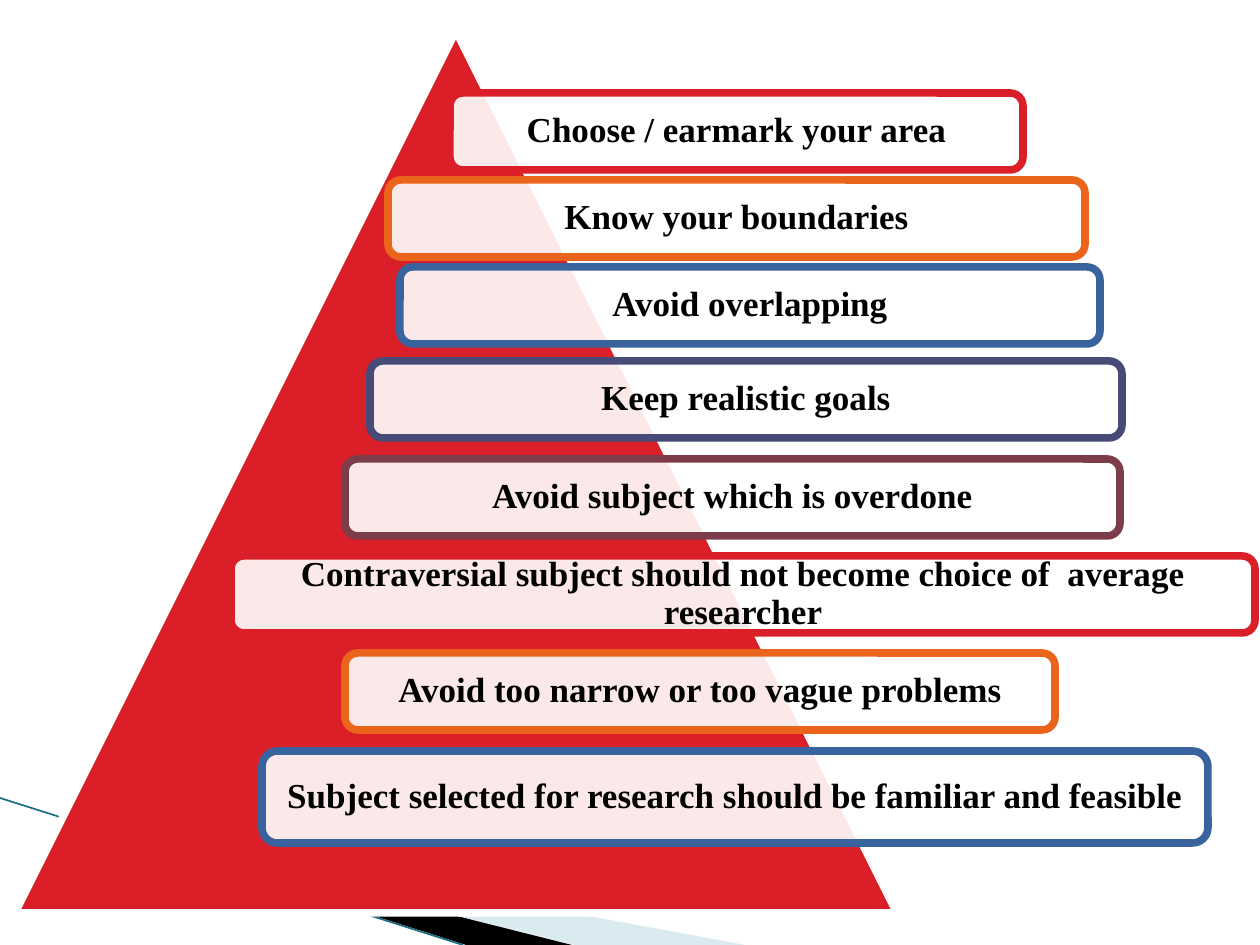
from lxml import etree
from pptx import Presentation
from pptx.dml.color import RGBColor
from pptx.enum.shapes import MSO_CONNECTOR, MSO_SHAPE
from pptx.enum.text import MSO_ANCHOR, PP_ALIGN
from pptx.oxml.ns import qn
from pptx.util import Pt

SCALE = 914400 / 126
TRI = MSO_SHAPE.ISOSCELES_TRIANGLE
ROUND = MSO_SHAPE.ROUNDED_RECTANGLE
LINE = MSO_CONNECTOR.STRAIGHT
MID = MSO_ANCHOR.MIDDLE
CENTER = PP_ALIGN.CENTER
RED, ORANGE, BLUE = "DA1F28", "EB641B", "39639D"

STEPS = [
    ("Choose / earmark your area", 450, 93, 573, 77, RED),
    ("Know your boundaries", 388, 180, 697, 77, ORANGE),
    ("Avoid overlapping", 400, 267, 700, 77, BLUE),
    ("Keep realistic goals", 370, 361, 752, 77, "474B78"),
    ("Avoid subject which is overdone", 345, 459, 775, 77, "7D3C4A"),
    ("Contraversial subject should not become choice of  average researcher",
     231, 556, 1024, 77, RED),
    ("Avoid too narrow or too vague problems", 345, 653, 710, 77, ORANGE),
    ("Subject selected for research should be familiar and feasible",
     262, 751, 946, 92, BLUE),
]


def px(num):
    return round(num * SCALE)


def color(code):
    return RGBColor.from_string(code)


def assign(target, values):
    for name, value in values.items():
        setattr(target, name, value)


class Deck:
    font = {"name": "Times New Roman", "size": Pt(20), "bold": True}
    para = {"alignment": CENTER, "line_spacing": 0.9}
    frame = {"word_wrap": True, "vertical_anchor": MID,
             "margin_left": px(6), "margin_right": px(6),
             "margin_top": px(6), "margin_bottom": px(6)}
    edge = Pt(4.33)

    def __init__(self, wide, high):
        self.file = Presentation()
        assign(self.file, {"slide_width": px(wide), "slide_height": px(high)})
        self.slide = self.file.slides.add_slide(self.file.slide_layouts[6])

    def paint(self, shape, fill, alpha=100, edge=None):
        shape.shadow.inherit = False
        shape.fill.solid()
        shape.fill.fore_color.rgb = color(fill)
        if alpha < 100:
            tone = shape.fill._xPr.find(qn("a:solidFill"))[0]
            etree.SubElement(tone, qn("a:alpha"), val=str(alpha * 1000))
        if edge:
            shape.line.color.rgb = color(edge)
            shape.line.width = self.edge
        else:
            shape.line.fill.background()

    def shape(self, kind, left, top, wide, high, fill, edge, alpha=100):
        item = self.slide.shapes.add_shape(
            kind, px(left), px(top), px(wide), px(high))
        self.paint(item, fill, alpha, edge)
        return item

    def step(self, text, left, top, wide, high, edge):
        item = self.shape(ROUND, left, top, wide, high, "FFFFFF", edge, 90)
        frame = item.text_frame
        assign(frame, self.frame)
        para = frame.paragraphs[0]
        assign(para, self.para)
        run = para.add_run()
        run.text = text
        assign(run.font, self.font)
        run.font.color.rgb = color("000000")

    def wedge(self, points, fill, alpha=100):
        first, *rest = [(px(x), px(y)) for x, y in points]
        form = self.slide.shapes.build_freeform(*first)
        form.add_line_segments(rest)
        self.paint(form.convert_to_shape(), fill, alpha)

    def rule(self, x1, y1, x2, y2, tone, width):
        item = self.slide.shapes.add_connector(
            LINE, px(x1), px(y1), px(x2), px(y2))
        item.line.color.rgb = color(tone)
        item.line.width = Pt(width)
        etree.SubElement(item._element.spPr, qn("a:effectLst"))


def main():
    deck = Deck(1260, 945)
    deck.wedge([(69, 820), (745, 945), (575, 945), (69, 819)], "A0CBDC", 40)
    deck.wedge([(67, 818), (572, 945), (466, 945), (68, 819)], "000000")
    deck.rule(0, 798, 463, 945, "1B6C84", 0.95)
    deck.shape(TRI, 15, 31, 882, 882, RED, "FFFFFF")
    for step in STEPS:
        deck.step(*step)
    deck.file.save("out.pptx")


if __name__ == "__main__":
    main()
